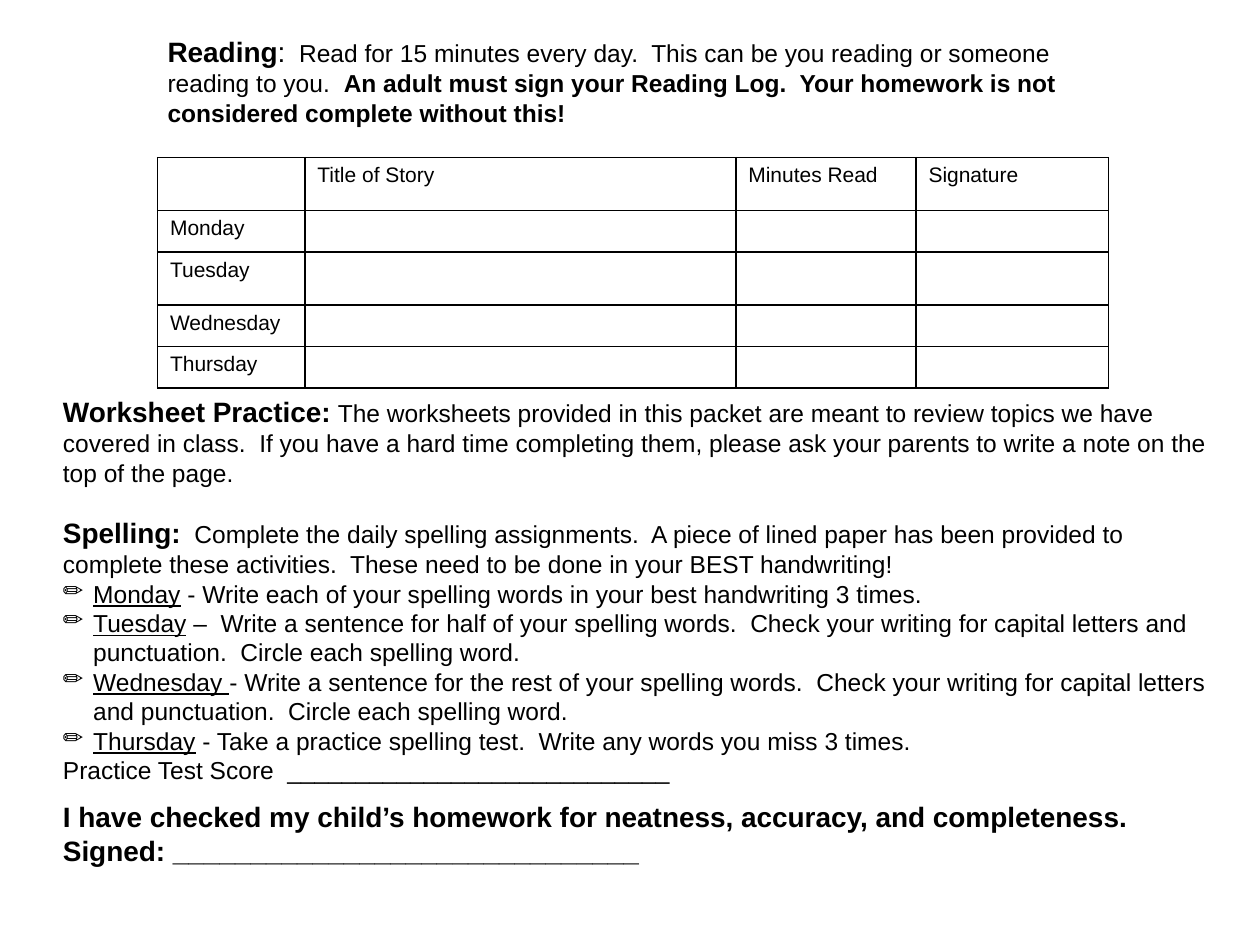
"""Build a weekly homework sheet with a reading log and spelling tasks."""
from lxml import etree
from pptx import Presentation
from pptx import util as u
from pptx.dml.color import RGBColor
from pptx.enum import text
from pptx.oxml.ns import qn

COLORS = {"ink": "000000", "paper": "FFFFFF"}
FONT = "Arial"
DAYS = ["Monday", "Tuesday", "Wednesday", "Thursday"]
LOG_HEADINGS = ["", "Title of Story", "Minutes Read", "Signature"]
LOG_WIDTHS = [1.17, 3.42, 1.43, 1.53]
LOG_HEIGHTS = [0.42, 0.33, 0.42, 0.33, 0.33]
READING = [
    ("Reading", {"size": 16, "bold": True}),
    (":", {"size": 16}),
    ("  Read for 15 minutes every day.  This can be you reading or someone reading to you.  ", {}),
    ("An adult must sign your Reading Log.  Your homework is not considered complete "
     "without this!", {"bold": True}),
]
WORKSHEETS = [
    ("Worksheet Practice:", {"size": 16, "bold": True}),
    (" ", {"bold": True}),
    ("The worksheets provided in this packet are meant to review topics we have covered in "
     "class.  If you have a hard time completing them, please ask your parents to write a "
     "note on the top of the page.", {}),
]
SPELLING = [
    ("Spelling:", {"size": 16, "bold": True}),
    ("  Complete the daily spelling assignments.  A piece of lined paper has been provided to "
     "complete these activities.  These need to be done in your BEST handwriting!", {}),
]
SPELLING_TASKS = [
    ("Monday", " - Write each of your spelling words in your best handwriting 3 times."),
    ("Tuesday", " –  Write a sentence for half of your spelling words.  Check your writing for "
                "capital letters and punctuation.  Circle each spelling word."),
    ("Wednesday ", "- Write a sentence for the rest of your spelling words.  Check your writing "
                   "for capital letters and punctuation.  Circle each spelling word."),
    ("Thursday", " - Take a practice spelling test.  Write any words you miss 3 times."),
]
TEST_SCORE = "Practice Test Score  " + "_" * 28
PARENT_CHECK = "I have checked my child’s homework for neatness, accuracy, and completeness."
PARENT_SIGNATURE = "Signed: " + "_" * 30


def add_text(paragraph, wording, size=14, bold=False, underline=False):
    """Append one formatted run to a paragraph."""
    run = paragraph.add_run()
    run.text = wording
    run.font.name = FONT
    run.font.size = u.Pt(size)
    run.font.bold = bold
    run.font.underline = underline
    run.font.color.rgb = RGBColor.from_string(COLORS["ink"])


def hang(paragraph, indent, bullet=None):
    """Give a paragraph a hanging indent and an optional bullet."""
    properties = paragraph._p.get_or_add_pPr()
    properties.set("marL", str(u.Inches(indent)))
    properties.set("indent", str(-u.Inches(indent)))
    if bullet:
        etree.SubElement(properties, qn("a:buChar")).set("char", bullet)


def add_frame(slide, box, anchor):
    """Add a wrapping text box without margins and return its frame."""
    frame = slide.shapes.add_textbox(*map(u.Inches, box)).text_frame
    frame.word_wrap = True
    frame.vertical_anchor = anchor
    frame.margin_left = frame.margin_right = frame.margin_top = frame.margin_bottom = 0
    return frame


def add_paragraph(frame, runs, line=17.1, before=0, bullet=None):
    """Fill the first free paragraph of a frame with runs."""
    first = frame.paragraphs[0]
    paragraph = frame.add_paragraph() if first.runs else first
    paragraph.line_spacing = u.Pt(line)
    paragraph.space_before = u.Pt(before)
    if bullet:
        hang(paragraph, 0.24, bullet)
    for wording, style in runs:
        add_text(paragraph, wording, **style)


def add_reading(slide, box):
    """Place the reading instructions."""
    frame = add_frame(slide, box, text.MSO_ANCHOR.TOP)
    frame.margin_top = u.Inches(0.03)
    add_paragraph(frame, READING)


def outline_cell(cell):
    """Draw a thin border on all four sides of a cell."""
    properties = cell._tc.get_or_add_tcPr()
    for position, side in enumerate(("a:lnL", "a:lnR", "a:lnT", "a:lnB")):
        border = etree.Element(qn(side), w=str(u.Pt(1)))
        fill = etree.SubElement(border, qn("a:solidFill"))
        etree.SubElement(fill, qn("a:srgbClr"), val=COLORS["ink"])
        properties.insert(position, border)


def add_reading_log(slide, box):
    """Place the reading log with a row for each day."""
    rows = [LOG_HEADINGS] + [[day, "", "", ""] for day in DAYS]
    log = slide.shapes.add_table(len(rows), len(LOG_HEADINGS), *map(u.Inches, box)).table
    for column, width in zip(log.columns, LOG_WIDTHS):
        column.width = u.Inches(width)
    for row, height, entries in zip(log.rows, LOG_HEIGHTS, rows):
        row.height = u.Inches(height)
        for cell, entry in zip(row.cells, entries):
            cell.fill.solid()
            cell.fill.fore_color.rgb = RGBColor.from_string(COLORS["paper"])
            outline_cell(cell)
            paragraph = cell.text_frame.paragraphs[0]
            hang(paragraph, 0.38)
            if entry:
                add_text(paragraph, entry, size=12)
            else:
                etree.SubElement(paragraph._p, qn("a:endParaRPr"), sz="1200")


def add_assignments(slide, box):
    """Place the worksheet, spelling and signature section."""
    frame = add_frame(slide, box, text.MSO_ANCHOR.MIDDLE)
    add_paragraph(frame, WORKSHEETS)
    add_paragraph(frame, SPELLING, before=17.8)
    for day, task in SPELLING_TASKS:
        add_paragraph(frame, [(day, {"underline": True}), (task, {})], line=16.8, bullet="✏")
    add_paragraph(frame, [(TEST_SCORE, {})], line=16.8)
    strong = {"size": 16, "bold": True}
    add_paragraph(frame, [(PARENT_CHECK, strong)], line=19.2, before=8.8)
    add_paragraph(frame, [(PARENT_SIGNATURE, strong)], line=19.2)


def main():
    """Build and save the homework sheet."""
    deck = Presentation()
    deck.slide_width, deck.slide_height = u.Inches(10), u.Inches(7.5)
    slide = deck.slides.add_slide(deck.slide_layouts[6])
    add_reading(slide, (1.33, 0.27, 7.58, 1.03))
    add_reading_log(slide, (1.25, 1.25, sum(LOG_WIDTHS), sum(LOG_HEIGHTS)))
    add_assignments(slide, (0.5, 3.12, 9.17, 3.8))
    deck.save("out.pptx")


if __name__ == "__main__":
    main()
